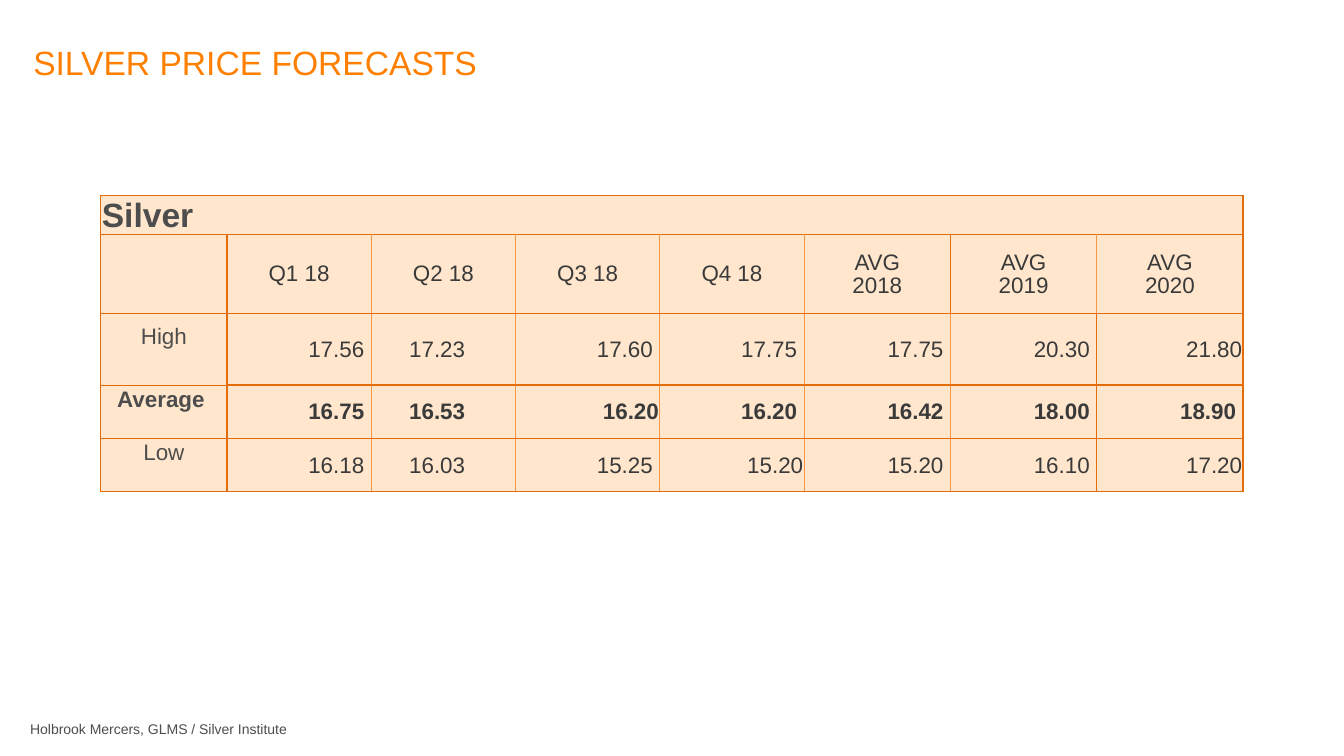
from dataclasses import dataclass

from lxml import etree
from pptx import Presentation
from pptx import util as u
from pptx.dml.color import RGBColor
from pptx.enum import text
from pptx.oxml import ns


@dataclass(frozen=True)
class Theme:
    """Colours, font and type sizes of the slide."""
    font: str = "Arial"
    orange: str = "FF8000"
    grey: str = "4D4D4D"
    dark: str = "3A3A3A"
    peach: str = "FFE6CC"
    rule: str = "E46D0A"
    light_rule: str = "F79646"
    heading: int = 24
    body: int = 16
    source: int = 10


THEME = Theme()
PERIODS = ["Q1 18", "Q2 18", "Q3 18", "Q4 18", "AVG\n2018", "AVG\n2019", "AVG\n2020"]
FORECASTS = {
    "High": ["17.56", "17.23", "17.60", "17.75", "17.75", "20.30", "21.80"],
    "Average": ["16.75", "16.53", "16.20", "16.20", "16.42", "18.00", "18.90"],
    "Low": ["16.18", "16.03", "15.25", "15.20", "15.20", "16.10", "17.20"],
}
FLUSH_RIGHT = {("High", 7), ("Average", 3), ("Low", 4), ("Low", 7)}
COLUMN_WIDTHS = [1.25] + [1.43] * 4 + [1.45] * 3
ROW_HEIGHTS = [0.39, 0.78, 0.71, 0.53, 0.53]


def add_run(paragraph, wording, size, colour, bold=False):
    """Add one formatted run to a paragraph."""
    run = paragraph.add_run()
    run.text = wording
    run.font.name = THEME.font
    run.font.size = u.Pt(size)
    run.font.bold = bold
    run.font.color.rgb = RGBColor.from_string(colour)


def set_insets(holder, left=0.01, top=0.01, right=0.01, bottom=0):
    """Set the inner margins of a cell or text frame in inches."""
    holder.margin_left, holder.margin_top = u.Inches(left), u.Inches(top)
    holder.margin_right, holder.margin_bottom = u.Inches(right), u.Inches(bottom)


def draw_border(cell, side, colour, width=1):
    """Draw one edge of a cell, or clear it when there is no colour."""
    edge = etree.SubElement(cell._tc.get_or_add_tcPr(), ns.qn(f"a:ln{side}"), w=str(u.Pt(width)))
    if colour is None:
        etree.SubElement(edge, ns.qn("a:noFill"))
    else:
        fill = etree.SubElement(edge, ns.qn("a:solidFill"))
        etree.SubElement(fill, ns.qn("a:srgbClr"), val=colour)


def vertical_rule(row, line):
    """Return colour and width of the vertical line left of a column."""
    if line in (0, len(COLUMN_WIDTHS)):
        return THEME.rule, 1
    if row == 0:
        return None, 1
    if row == 1 and line == 6:
        return THEME.rule, 0.5
    if line == 1 or (row > 1 and line == 7):
        return THEME.rule, 1
    return THEME.light_rule, 1


def style_cell(cell, row, column):
    """Give a cell its rules, fill, margins and anchor."""
    draw_border(cell, "L", *vertical_rule(row, column))
    draw_border(cell, "R", *vertical_rule(row, column + 1))
    thin_top = column == 0 and row > 1
    thin_bottom = column == 0 and 0 < row < len(ROW_HEIGHTS) - 1
    draw_border(cell, "T", THEME.rule, 0.5 if thin_top else 1)
    draw_border(cell, "B", THEME.rule, 0.5 if thin_bottom else 1)
    cell.fill.solid()
    cell.fill.fore_color.rgb = RGBColor.from_string(THEME.peach)
    set_insets(cell)
    cell.vertical_anchor = text.MSO_ANCHOR.MIDDLE


def fill_period(cell, period):
    """Write a column heading, one paragraph for each line."""
    for index, line in enumerate(period.split("\n")):
        frame = cell.text_frame
        paragraph = frame.add_paragraph() if index else frame.paragraphs[0]
        paragraph.alignment = text.PP_ALIGN.CENTER
        paragraph.line_spacing = 0.93
        add_run(paragraph, line, THEME.body, THEME.dark)


def fill_forecast(table, row, level, prices):
    """Write one row of the forecast, label first."""
    bold = level == "Average"
    label = table.cell(row, 0)
    set_insets(label, right=0.07 if bold else 0.01, bottom=0.25)
    label_line = label.text_frame.paragraphs[0]
    label_line.alignment = text.PP_ALIGN.CENTER
    add_run(label_line, level, THEME.body, THEME.grey, bold)
    for column, price in enumerate(prices, 1):
        cell = table.cell(row, column)
        gap = 0.01 if (level, column) in FLUSH_RIGHT else 0.5 if column == 2 else 0.07
        set_insets(cell, right=gap)
        price_line = cell.text_frame.paragraphs[0]
        price_line.alignment = text.PP_ALIGN.RIGHT
        add_run(price_line, price, THEME.body, THEME.dark, bold)


def add_forecast_table(slide, left, top, width, height):
    """Build the silver price table in its box."""
    table = slide.shapes.add_table(
        len(ROW_HEIGHTS), len(COLUMN_WIDTHS), u.Inches(left), u.Inches(top),
        u.Inches(width), u.Inches(height)).table
    table.first_row = table.horz_banding = False
    for column, share in zip(table.columns, COLUMN_WIDTHS):
        column.width = u.Inches(width * share / sum(COLUMN_WIDTHS))
    for row, share in zip(table.rows, ROW_HEIGHTS):
        row.height = u.Inches(height * share / sum(ROW_HEIGHTS))
    for row in range(len(ROW_HEIGHTS)):
        for column in range(len(COLUMN_WIDTHS)):
            style_cell(table.cell(row, column), row, column)
    table.cell(0, 1).merge(table.cell(0, 6))
    metal = table.cell(0, 0)
    metal.vertical_anchor = text.MSO_ANCHOR.BOTTOM
    add_run(metal.text_frame.paragraphs[0], "Silver", THEME.heading, THEME.grey, True)
    for column, period in enumerate(PERIODS, 1):
        fill_period(table.cell(1, column), period)
    for row, (level, prices) in enumerate(FORECASTS.items(), 2):
        fill_forecast(table, row, level, prices)


def add_title(slide, left, top, width, height):
    """Place and format the title placeholder."""
    title = slide.shapes.title
    title.left, title.top = u.Inches(left), u.Inches(top)
    title.width, title.height = u.Inches(width), u.Inches(height)
    frame = title.text_frame
    set_insets(frame, left=0, top=0.42, right=0)
    frame.vertical_anchor = text.MSO_ANCHOR.TOP
    frame.auto_size = text.MSO_AUTO_SIZE.NONE
    frame.paragraphs[0].alignment = text.PP_ALIGN.LEFT
    add_run(frame.paragraphs[0], "SILVER PRICE FORECASTS", THEME.heading, THEME.orange)


def add_source(slide, left, top, width, height):
    """Place the source line at the foot of the slide."""
    source = slide.shapes.add_textbox(
        u.Inches(left), u.Inches(top), u.Inches(width), u.Inches(height))
    source.text_frame.word_wrap = False
    source.text_frame.auto_size = text.MSO_AUTO_SIZE.SHAPE_TO_FIT_TEXT
    add_run(source.text_frame.paragraphs[0], "Holbrook Mercers, GLMS / Silver Institute",
            THEME.source, THEME.grey)


def main():
    """Build the slide and save it."""
    deck = Presentation()
    deck.slide_width, deck.slide_height = u.Inches(13.33), u.Inches(7.5)
    slide = deck.slides.add_slide(deck.slide_layouts[5])
    add_title(slide, 0.33, 0, 11.33, 1.15)
    add_forecast_table(slide, 1, 1.94, 11.33, 2.94)
    add_source(slide, 0.2, 7.1, 2.79, 0.27)
    deck.save("out.pptx")


if __name__ == "__main__":
    main()
